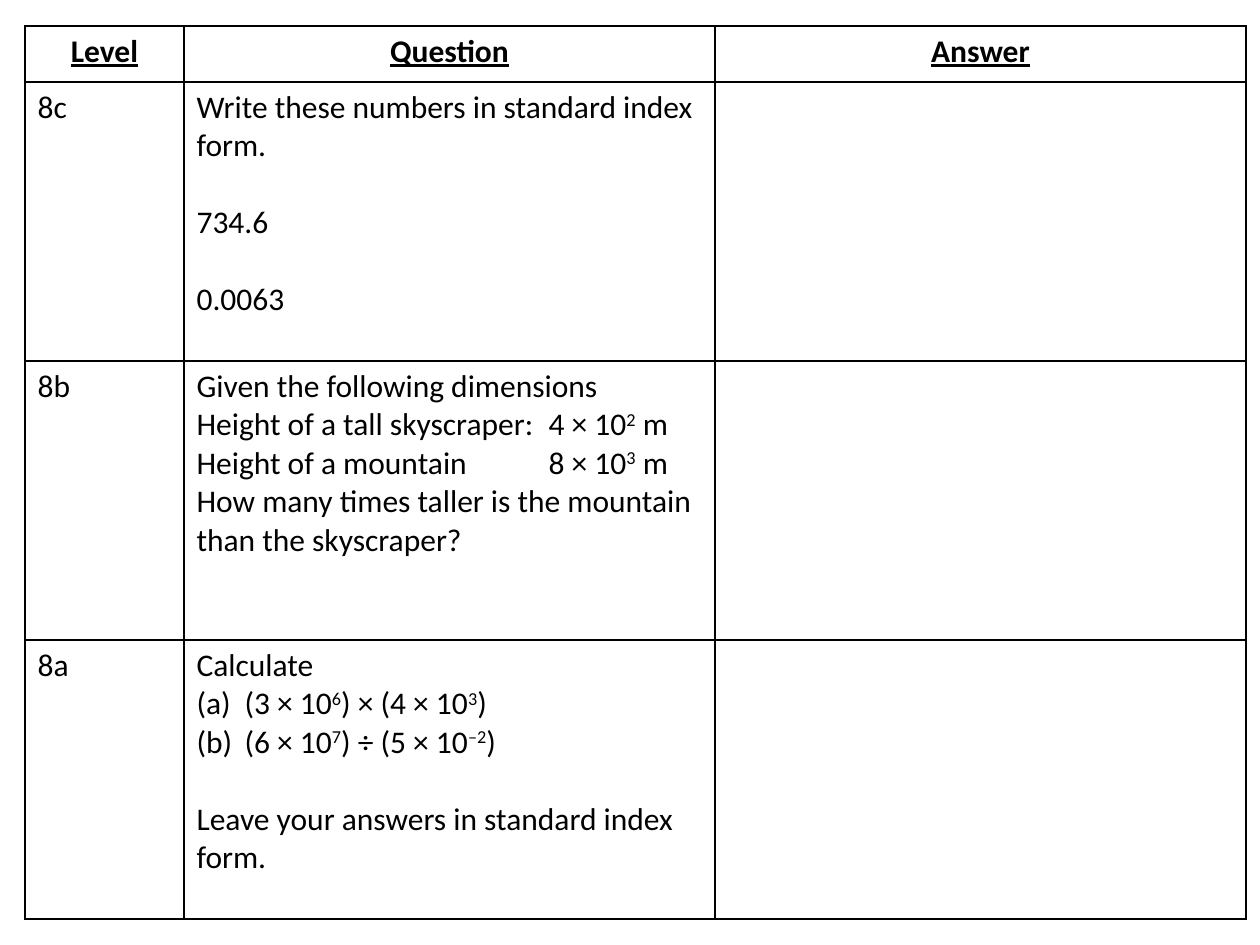
from pptx import Presentation
from pptx.dml.color import RGBColor
from pptx.enum.text import PP_ALIGN
from pptx.oxml.ns import qn
from pptx.util import Pt
from lxml.etree import SubElement, Element

PX = 914400 / 126
FONT, SIZE, LINE = "Calibri", 18, 22
INK, PAPER = "000000", "FFFFFF"
LEFT, TOP = 25, 26
COLUMNS = [159, 531, 531]
ROWS = [56, 279, 279, 279]
HEIGHT_TAB, LIST_INDENT = 352, 48

HEADINGS = ["Level", "Question", "Answer"]
# Each line is (style, text); ^ switches superscript on and off.
QUESTIONS = [
    ("8c", [
        ("plain", "Write these numbers in standard index form."),
        ("gap", "734.6"),
        ("gap", "0.0063"),
    ]),
    ("8b", [
        ("plain", "Given the following dimensions"),
        ("tab", "Height of a tall skyscraper:\t4 × 10^2^ m"),
        ("tab", "Height of a mountain\t8 × 10^3^ m"),
        ("plain", "How many times taller is the mountain than the skyscraper?"),
    ]),
    ("8a", [
        ("plain", "Calculate"),
        ("list", "(3 × 10^6^) × (4 × 10^3^)"),
        ("list", "(6 × 10^7^) ÷ (5 × 10^–2^)"),
        ("gap", "Leave your answers in standard index form."),
    ]),
]


def px(length):
    return round(length * PX)


def color(value):
    return RGBColor.from_string(value)


def write_line(paragraph, text, style="plain", heading=False):
    for position, piece in enumerate(text.split("^")):
        run = paragraph.add_run()
        run.text = piece
        run.font.name, run.font.size = FONT, Pt(SIZE)
        run.font.color.rgb = color(INK)
        run.font.bold = run.font.underline = heading
        if position % 2:
            run.font._element.set("baseline", "30000")
    if heading:
        paragraph.alignment = PP_ALIGN.CENTER
    properties = paragraph._p.get_or_add_pPr()
    if style == "gap":
        paragraph.space_before = Pt(LINE)
    elif style == "tab":
        stops = SubElement(properties, qn("a:tabLst"))
        SubElement(stops, qn("a:tab"), pos=str(px(HEIGHT_TAB)), algn="l")
    elif style == "list":
        properties.set("marL", str(px(LIST_INDENT)))
        properties.set("indent", str(-px(LIST_INDENT)))
        SubElement(properties, qn("a:buFont"), typeface=FONT)
        SubElement(properties, qn("a:buAutoNum"), type="alphaLcParenBoth")


def frame_cell(cell):
    cell.fill.solid()
    cell.fill.fore_color.rgb = color(PAPER)
    properties = cell._tc.get_or_add_tcPr()
    for position, side in enumerate(["lnL", "lnR", "lnT", "lnB"]):
        border = Element(qn(f"a:{side}"), w=str(Pt(1)))
        fill = SubElement(border, qn("a:solidFill"))
        SubElement(fill, qn("a:srgbClr"), val=INK)
        properties.insert(position, border)


def main():
    deck = Presentation()
    deck.slide_width, deck.slide_height = px(1260), px(945)
    slide = deck.slides.add_slide(deck.slide_layouts[6])
    worksheet = slide.shapes.add_table(
        len(ROWS), len(COLUMNS), px(LEFT), px(TOP), px(sum(COLUMNS)), px(sum(ROWS))
    ).table
    worksheet.first_row = worksheet.horz_banding = False
    for column, width in zip(worksheet.columns, COLUMNS):
        column.width = px(width)
    for row, height in zip(worksheet.rows, ROWS):
        row.height = px(height)
    for cell in worksheet.iter_cells():
        frame_cell(cell)

    for column, heading in enumerate(HEADINGS):
        frame = worksheet.cell(0, column).text_frame
        write_line(frame.paragraphs[0], heading, heading=True)
    for row, (level, lines) in enumerate(QUESTIONS, start=1):
        write_line(worksheet.cell(row, 0).text_frame.paragraphs[0], level)
        frame = worksheet.cell(row, 1).text_frame
        for position, (style, text) in enumerate(lines):
            paragraph = frame.add_paragraph() if position else frame.paragraphs[0]
            write_line(paragraph, text, style)

    deck.save("out.pptx")


if __name__ == "__main__":
    main()
